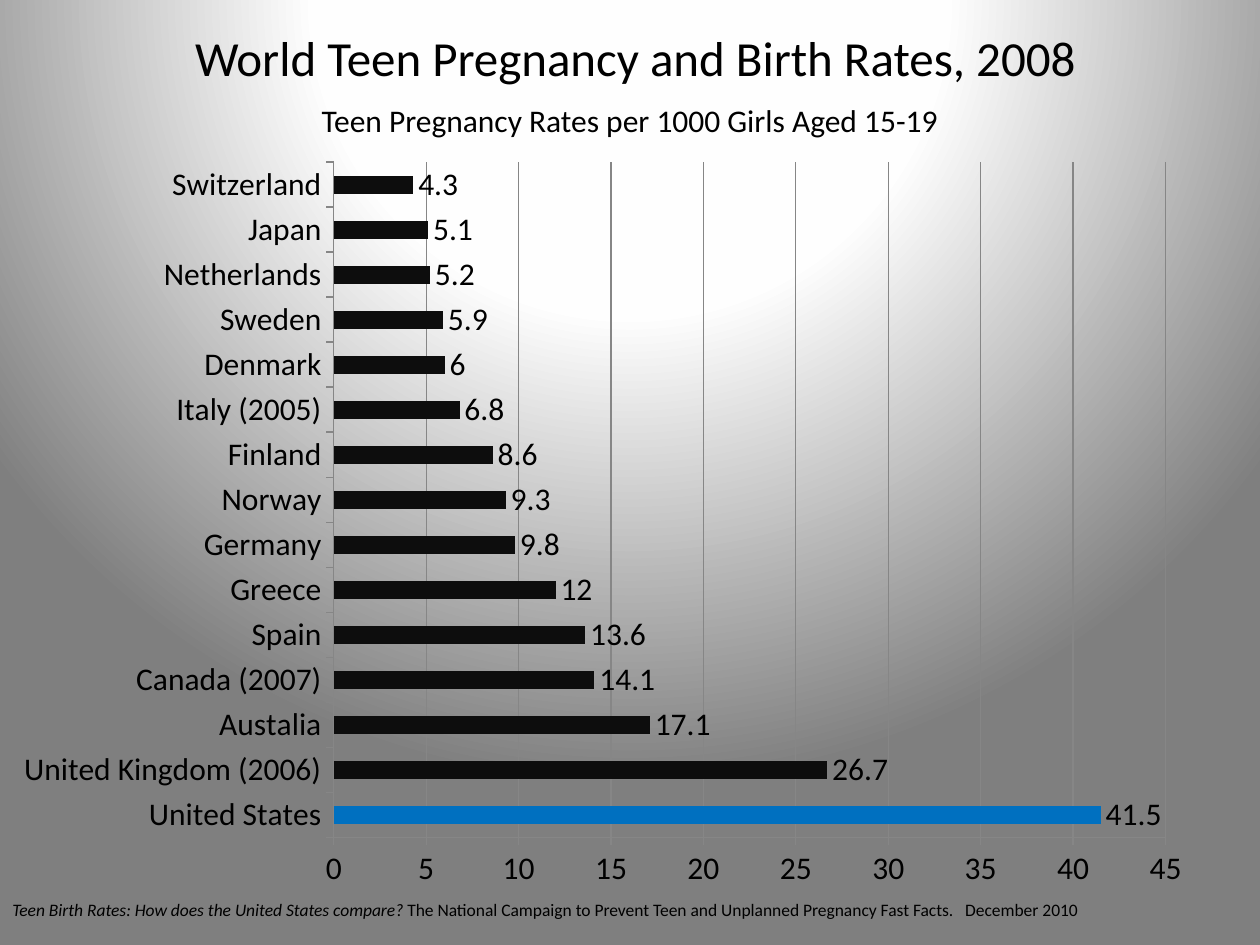
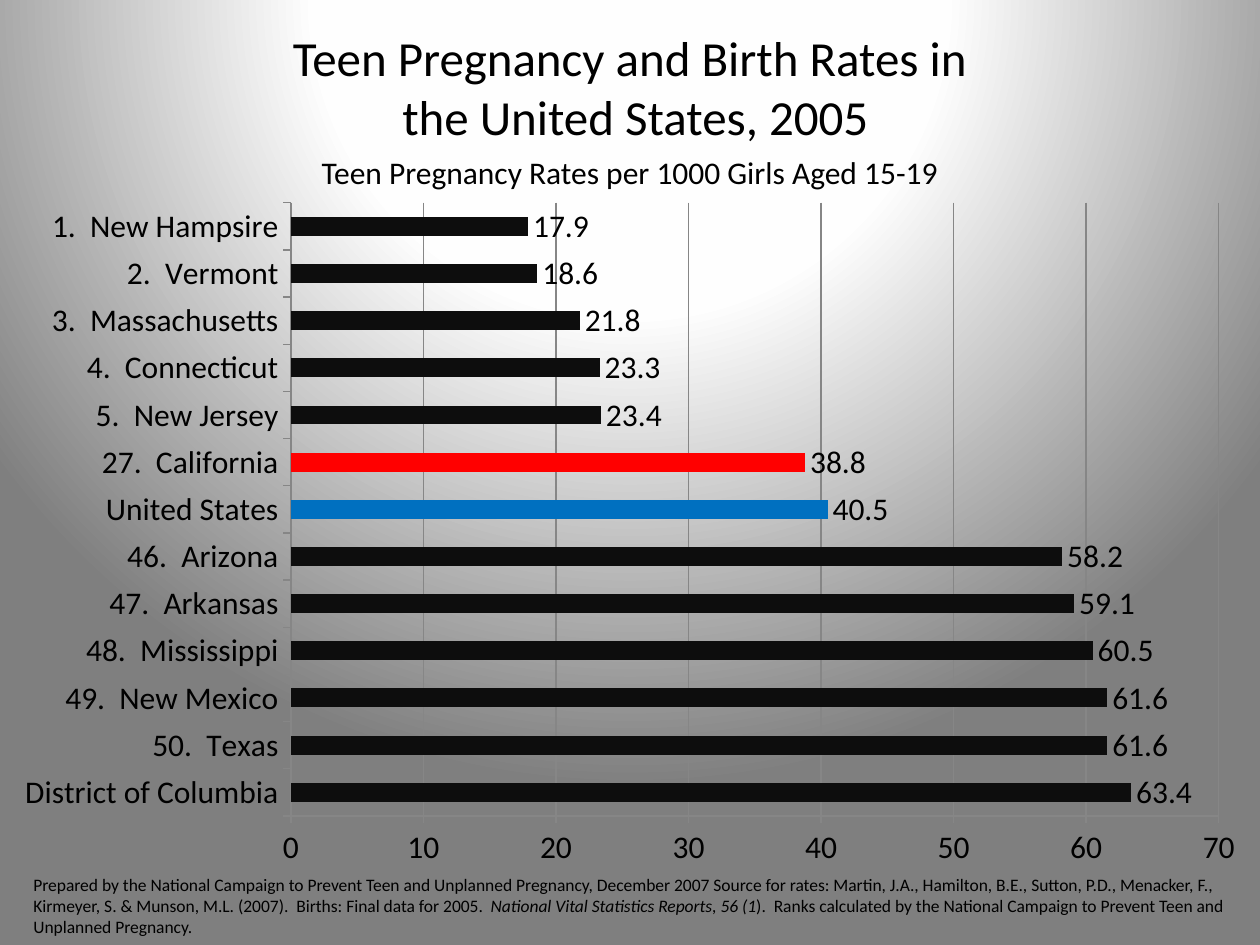
from dataclasses import dataclass

from lxml import etree
from pptx import Presentation
from pptx import util as u
from pptx.chart import data as chart_data
from pptx.dml.color import RGBColor
from pptx.enum import chart as charts, text
from pptx.oxml import ns

FONT = "Calibri"
BLACK = RGBColor(0, 0, 0)
BAR = RGBColor(0x0D, 0x0D, 0x0D)
NATION = RGBColor(0x00, 0x70, 0xC0)
STATE = RGBColor(0xFF, 0, 0)
AXIS_GRAY = RGBColor(0x86, 0x86, 0x86)
SUBTITLE = "Teen Pregnancy Rates per 1000 Girls Aged 15-19"
HIGHLIGHTS = {"United States": NATION, "27.  California": STATE}
BACKDROP_STOPS = ((0, "FFFFFF"), (40, "FEFEFE"), (100, "7F7F7F"))
TITLE_ONLY = 5

WORLD_RATES = {
    "United States": 41.5, "United Kingdom (2006)": 26.7, "Austalia": 17.1,
    "Canada (2007)": 14.1, "Spain": 13.6, "Greece": 12, "Germany": 9.8,
    "Norway": 9.3, "Finland": 8.6, "Italy (2005)": 6.8, "Denmark": 6,
    "Sweden": 5.9, "Netherlands": 5.2, "Japan": 5.1, "Switzerland": 4.3,
}
STATE_RATES = {
    "District of Columbia": 63.4, "50.  Texas": 61.6, "49.  New Mexico": 61.6,
    "48.  Mississippi": 60.5, "47.  Arkansas": 59.1, "46.  Arizona": 58.2,
    "United States": 40.5, "27.  California": 38.8, "5.  New Jersey": 23.4,
    "4.  Connecticut": 23.3, "3.  Massachusetts": 21.8, "2.  Vermont": 18.6,
    "1.  New Hampsire": 17.9,
}
WORLD_SOURCE = (
    ("Teen Birth Rates: How does the United States compare? ", True),
    ("The National Campaign to Prevent Teen and Unplanned Pregnancy Fast Facts."
     "   December 2010", False),
)
STATE_SOURCE = (
    ("Prepared by the National Campaign to Prevent Teen and Unplanned Pregnancy, "
     "December 2007 Source for rates: Martin, J.A., Hamilton, B.E., Sutton, P.D., "
     "Menacker, F., Kirmeyer, S. & Munson, M.L. (2007).  Births: Final data for 2005.  ", False),
    ("National Vital Statistics Reports, 56 (1", True),
    (").  Ranks calculated by the National Campaign to Prevent Teen and Unplanned "
     "Pregnancy.", False),
)


@dataclass
class Box:
    """A region of a slide, in points."""
    left: float
    top: float
    width: float
    height: float

    def lengths(self):
        """Return the four lengths in the order python-pptx expects."""
        return [u.Pt(value) for value in (self.left, self.top, self.width, self.height)]


def style_font(font, size, italic=False):
    """Apply the shared typeface and colour."""
    font.name, font.size, font.italic = FONT, u.Pt(size), italic
    font.color.rgb = BLACK


def write_text(shape, paragraphs, size, alignment):
    """Fill a shape with paragraphs given as (words, italic) runs."""
    frame = shape.text_frame
    frame.word_wrap = True
    frame.auto_size = text.MSO_AUTO_SIZE.NONE
    frame.vertical_anchor = text.MSO_ANCHOR.TOP
    for index, runs in enumerate(paragraphs):
        paragraph = frame.add_paragraph() if index else frame.paragraphs[0]
        paragraph.alignment = alignment
        for words, italic in runs:
            run = paragraph.add_run()
            run.text = words
            style_font(run.font, size, italic)


def set_backdrop(master):
    """Give the master a radial gradient centred above the slide."""
    fill = master.background.fill
    fill.solid()
    solid = master.element.find(".//" + ns.qn("p:bgPr")).find(ns.qn("a:solidFill"))
    gradient = etree.Element(ns.qn("a:gradFill"), rotWithShape="1")
    stops = etree.SubElement(gradient, ns.qn("a:gsLst"))
    for percent, color in BACKDROP_STOPS:
        stop = etree.SubElement(stops, ns.qn("a:gs"), pos=str(percent * 1000))
        etree.SubElement(stop, ns.qn("a:srgbClr"), val=color)
    circle = etree.SubElement(gradient, ns.qn("a:path"), {"path": "circle"})
    etree.SubElement(circle, ns.qn("a:fillToRect"), l="50000", t="-80000", r="50000", b="180000")
    solid.getparent().replace(solid, gradient)


def add_title(slide, box, lines):
    """Place the title placeholder, one paragraph a line."""
    title = slide.shapes.title
    title.left, title.top, title.width, title.height = box.lengths()
    write_text(title, [[(line, False)] for line in lines], 28, text.PP_ALIGN.CENTER)


def add_text(slide, box, runs, size, alignment):
    """Add a one-paragraph text box."""
    write_text(slide.shapes.add_textbox(*box.lengths()), [runs], size, alignment)


def add_rate_chart(slide, box, rates, maximum, step):
    """Add a bar chart of rates with highlighted places."""
    content = chart_data.CategoryChartData()
    content.categories = list(rates)
    content.add_series("Series 1", list(rates.values()))
    chart = slide.shapes.add_chart(
        charts.XL_CHART_TYPE.BAR_CLUSTERED, *box.lengths(), content).chart
    chart.has_legend = chart.has_title = False
    style_font(chart.font, 18)

    for axis in (chart.category_axis, chart.value_axis):
        axis.major_tick_mark = charts.XL_TICK_MARK.OUTSIDE
        axis.format.line.color.rgb = AXIS_GRAY
        axis.format.line.width = u.Pt(0.75)
    chart.category_axis.has_major_gridlines = False
    scale = chart.value_axis
    scale.minimum_scale, scale.maximum_scale, scale.major_unit = 0, maximum, step
    scale.has_major_gridlines = True
    scale.major_gridlines.format.line.color.rgb = AXIS_GRAY
    scale.major_gridlines.format.line.width = u.Pt(0.75)

    plot = chart.plots[0]
    plot.vary_by_categories = False
    plot.gap_width = 150
    plot.has_data_labels = True
    labels = plot.data_labels
    labels.show_value = True
    labels.position = charts.XL_LABEL_POSITION.OUTSIDE_END
    style_font(labels.font, 18)
    series = plot.series[0]
    series.invert_if_negative = False
    series.format.fill.solid()
    series.format.fill.fore_color.rgb = BAR
    for index, place in enumerate(rates):
        if place in HIGHLIGHTS:
            fill = series.points[index].format.fill
            fill.solid()
            fill.fore_color.rgb = HIGHLIGHTS[place]


def add_rate_slide(presentation, lines, title_height, subtitle_top,
                   rates, chart_box, maximum, step, source, source_box):
    """Build a slide with title, subtitle, rate chart and source."""
    slide = presentation.slides.add_slide(presentation.slide_layouts[TITLE_ONLY])
    add_title(slide, Box(72, 12, 582, title_height), lines)
    add_rate_chart(slide, chart_box, rates, maximum, step)
    add_text(slide, Box(18, subtitle_top, 684, 29), [(SUBTITLE, False)], 18,
             text.PP_ALIGN.CENTER)
    add_text(slide, source_box, source, 10, text.PP_ALIGN.LEFT)


def main():
    """Create and save the presentation."""
    presentation = Presentation()
    presentation.slide_width, presentation.slide_height = u.Pt(720), u.Pt(540)
    set_backdrop(presentation.slide_master)
    add_rate_slide(
        presentation, ["World Teen Pregnancy and Birth Rates, 2008"], 41, 54,
        WORLD_RATES, Box(0, 84, 689, 432), 45, 5,
        WORLD_SOURCE, Box(0, 510, 720, 19))
    add_rate_slide(
        presentation,
        ["Teen Pregnancy and Birth Rates in ", "the United States, 2005"], 75, 84,
        STATE_RATES, Box(0, 108, 720, 395), 70, 10,
        STATE_SOURCE, Box(12, 496, 708, 44))
    presentation.save("out.pptx")


if __name__ == "__main__":
    main()
